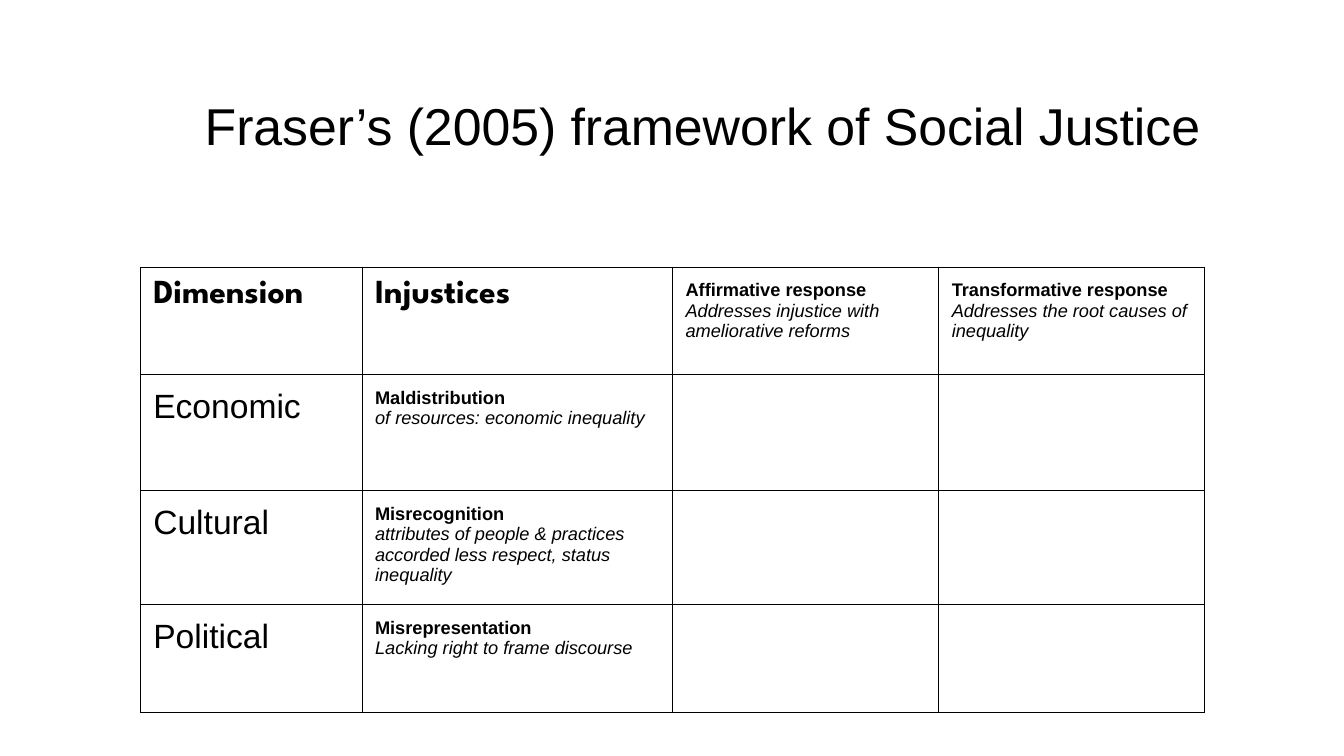
from lxml import etree
from pptx import Presentation, util as u
from pptx.dml.color import RGBColor
from pptx.enum import text
from pptx.oxml.ns import qn

BLACK = RGBColor(0, 0, 0)
BODY_FONT, HEADING_FONT = "Arial", "League Spartan"
TITLE_SIZE, LABEL_SIZE, DETAIL_SIZE = 37, 24, 13
INSET = u.Inches(0.13)
BORDER_WIDTH = u.Pt(0.75)

COLUMN_WIDTHS = [2.2, 3.08, 2.64, 2.64]
ROW_HEIGHTS = [1.07, 1.15, 1.08, 1.07]
HEADINGS = ["Dimension", "Injustices"]
RESPONSES = [
    ("Affirmative response", "Addresses injustice with ameliorative reforms"),
    ("Transformative response", "Addresses the root causes of inequality"),
]
DIMENSIONS = [
    ("Economic", "Maldistribution", "of resources: economic inequality"),
    ("Cultural", "Misrecognition",
     "attributes of people & practices accorded less respect, status inequality"),
    ("Political", "Misrepresentation", "Lacking right to frame discourse"),
]


class FrameworkSlide:
    def __init__(self, slide):
        self.slide = slide

    def set_text(self, paragraph, words, size, font=BODY_FONT, bold=False, italic=False):
        paragraph.text = words
        style = paragraph.font
        style.name, style.size = font, u.Pt(size)
        style.bold, style.italic = bold, italic
        style.color.rgb = BLACK

    def inset(self, target):
        target.margin_left = target.margin_right = INSET
        target.margin_top = target.margin_bottom = INSET

    def title(self, words, left, top, width, height):
        box = self.slide.shapes.add_textbox(
            *(u.Inches(length) for length in (left, top, width, height)))
        frame = box.text_frame
        frame.word_wrap = True
        frame.vertical_anchor = text.MSO_ANCHOR.TOP
        self.inset(frame)
        self.set_text(frame.paragraphs[0], words, TITLE_SIZE)
        frame.paragraphs[0].line_spacing = 0.9

    def grid(self, left, top, widths, heights):
        table = self.slide.shapes.add_table(
            len(heights), len(widths), u.Inches(left), u.Inches(top),
            u.Inches(sum(widths)), u.Inches(sum(heights))).table
        table.first_row = table.horz_banding = False
        for column, width in zip(table.columns, widths):
            column.width = u.Inches(width)
        for row, height in zip(table.rows, heights):
            row.height = u.Inches(height)
        for cell in table.iter_cells():
            self.inset(cell)
            cell.fill.background()
            self.border(cell)
        return table

    def border(self, cell):
        properties = cell._tc.get_or_add_tcPr()
        for position, side in enumerate(("a:lnL", "a:lnR", "a:lnT", "a:lnB")):
            line = etree.Element(qn(side), w=str(BORDER_WIDTH))
            fill = etree.SubElement(line, qn("a:solidFill"))
            etree.SubElement(fill, qn("a:srgbClr"), val=str(BLACK))
            properties.insert(position, line)

    def label(self, cell, words, font=BODY_FONT, bold=False):
        self.set_text(cell.text_frame.paragraphs[0], words, LABEL_SIZE, font, bold)

    def detail(self, cell, term, meaning):
        frame = cell.text_frame
        self.set_text(frame.paragraphs[0], term, DETAIL_SIZE, bold=True)
        self.set_text(frame.add_paragraph(), meaning, DETAIL_SIZE, italic=True)


def main():
    deck = Presentation()
    deck.slide_width, deck.slide_height = u.Inches(13.33), u.Inches(7.5)
    page = FrameworkSlide(deck.slides.add_slide(deck.slide_layouts[6]))

    page.title("Fraser’s (2005) framework of Social Justice", 1.9, 0.87, 10.25, 1.46)
    framework = page.grid(1.39, 2.65, COLUMN_WIDTHS, ROW_HEIGHTS)

    # Header row
    for column, heading in enumerate(HEADINGS):
        page.label(framework.cell(0, column), heading, HEADING_FONT, bold=True)
    for column, response in enumerate(RESPONSES, start=len(HEADINGS)):
        page.detail(framework.cell(0, column), *response)

    # One row per dimension, with the responses left open
    for row, (dimension, injustice, meaning) in enumerate(DIMENSIONS, start=1):
        page.label(framework.cell(row, 0), dimension)
        page.detail(framework.cell(row, 1), injustice, meaning)

    deck.save("out.pptx")


if __name__ == "__main__":
    main()
